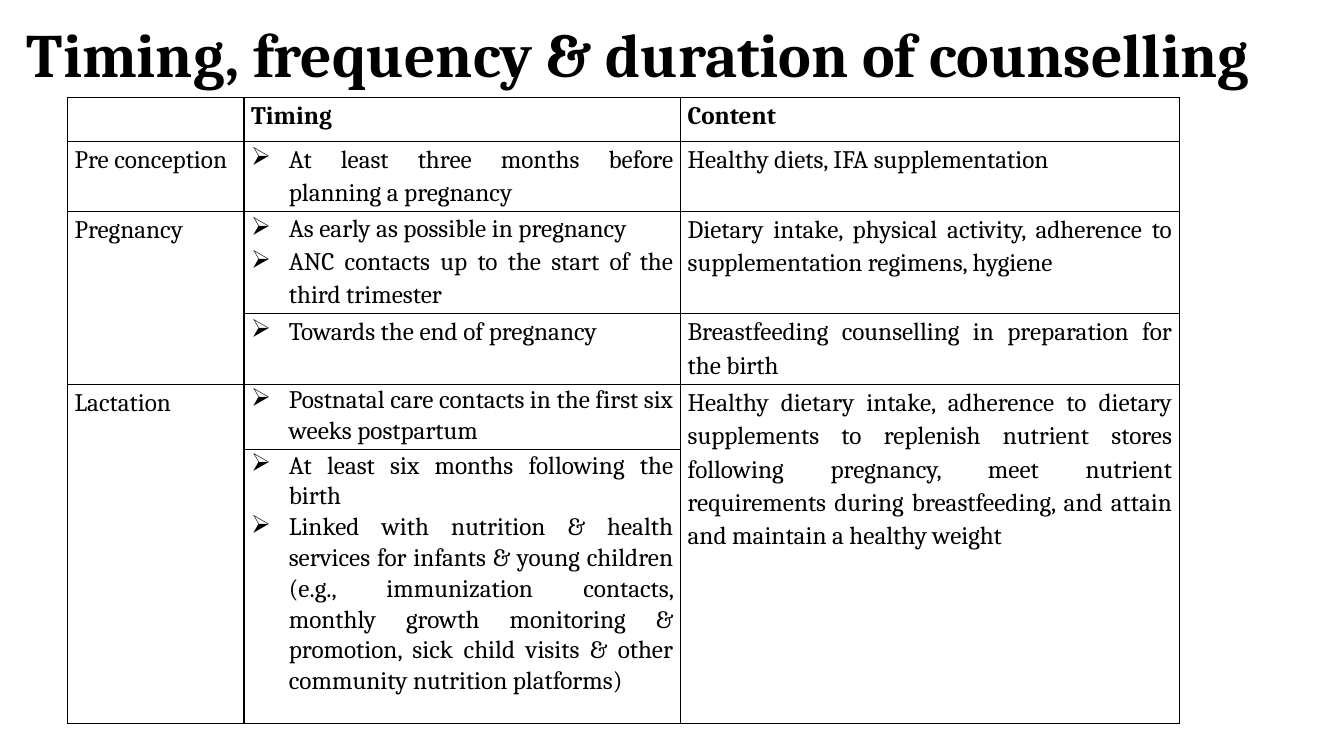
from pptx import Presentation
from pptx.dml.color import RGBColor as Rgb
from pptx.enum.text import MSO_ANCHOR as Anchor, PP_ALIGN as Align
from pptx.oxml import parse_xml
from pptx.oxml.ns import nsdecls
from pptx.util import Cm, Pt

TITLE = "Timing, frequency & duration of counselling"
HEAD = ["", "Timing", "Content"]
ROWS = [
    ("Pre conception",
     ["At least three months before planning a pregnancy"],
     "Healthy diets, IFA supplementation"),
    ("Pregnancy",
     ["As early as possible in pregnancy",
      "ANC contacts up to the start of the third trimester"],
     "Dietary intake, physical activity, adherence to supplementation "
     "regimens, hygiene"),
    ("",
     ["Towards the end of pregnancy"],
     "Breastfeeding counselling in preparation for the birth"),
    ("Lactation",
     ["Postnatal care contacts in the first six weeks postpartum"],
     "Healthy dietary intake, adherence to dietary supplements to replenish "
     "nutrient stores following pregnancy, meet nutrient requirements during "
     "breastfeeding, and attain and maintain a healthy weight"),
    ("",
     ["At least six months following the birth",
      "Linked with nutrition & health services for infants & young children "
      "(e.g., immunization contacts, monthly growth monitoring & promotion, "
      "sick child visits & other community nutrition platforms)"],
     ""),
]
MERGES = [((2, 0), (3, 0)), ((4, 0), (5, 0)), ((4, 2), (5, 2))]
WIDTHS = [4.45, 11, 12.57]
HEIGHTS = [1.11, 1.75, 2.49, 1.78, 1.65, 6.9]
SPACING = [1.15, 1.13, 1.13, 1.13, 1.06, 1.06]
COLORS = {"ink": "000000", "paper": "FFFFFF"}
FONT = "Cambria"


def write(frame, text, size=18, bold=False, align=Align.JUSTIFY, line=1.15,
          bullet=False):
    lines = text if isinstance(text, list) else [text]
    for i, words in enumerate(lines):
        para = frame.paragraphs[0] if i == 0 else frame.add_paragraph()
        para.alignment = align
        para.line_spacing = line
        if bullet:
            props = para._p.get_or_add_pPr()
            props.set("marL", str(Cm(0.95)))
            props.set("indent", str(-Cm(0.95)))
            props.append(parse_xml(f'<a:buChar {nsdecls("a")} char="➢"/>'))
        font = para.font
        if words:
            run = para.add_run()
            run.text = words
            font = run.font
        font.name = FONT
        font.size = Pt(size)
        font.bold = bold
        font.color.rgb = Rgb.from_string(COLORS["ink"])


def style(cell):
    cell.margin_left = cell.margin_right = Cm(0.18)
    cell.margin_top = cell.margin_bottom = 0
    props = cell._tc.get_or_add_tcPr()
    for side in ("lnL", "lnR", "lnT", "lnB"):
        props.append(parse_xml(
            f'<a:{side} {nsdecls("a")} w="{Pt(1)}"><a:solidFill>'
            f'<a:srgbClr val="{COLORS["ink"]}"/></a:solidFill></a:{side}>'))
    cell.fill.solid()
    cell.fill.fore_color.rgb = Rgb.from_string(COLORS["paper"])


def main():
    deck = Presentation()
    deck.slide_width, deck.slide_height = Cm(33.87), Cm(19.05)
    slide = deck.slides.add_slide(deck.slide_layouts[6])

    box = slide.shapes.add_textbox(Cm(0.43), Cm(0.53), Cm(33.43), Cm(1.63))
    frame = box.text_frame
    frame.word_wrap = True
    frame.vertical_anchor = Anchor.MIDDLE
    frame.margin_top = frame.margin_bottom = 0
    write(frame, TITLE, size=44, bold=True, align=Align.LEFT, line=1.0)

    grid = [HEAD, *ROWS]
    table = slide.shapes.add_table(
        len(grid), len(HEAD), Cm(1.7), Cm(2.46),
        Cm(sum(WIDTHS)), Cm(sum(HEIGHTS))).table
    table.first_row = table.horz_banding = False
    for col, width in zip(table.columns, WIDTHS):
        col.width = Cm(width)
    for row, height in zip(table.rows, HEIGHTS):
        row.height = Cm(height)
    for r, texts in enumerate(grid):
        for c, text in enumerate(texts):
            cell = table.cell(r, c)
            style(cell)
            listed = isinstance(text, list)
            write(cell.text_frame, text, bold=r == 0, bullet=listed,
                  line=SPACING[r] if listed else 1.15)
    for start, end in MERGES:
        table.cell(*start).merge(table.cell(*end))

    deck.save("out.pptx")


if __name__ == "__main__":
    main()
